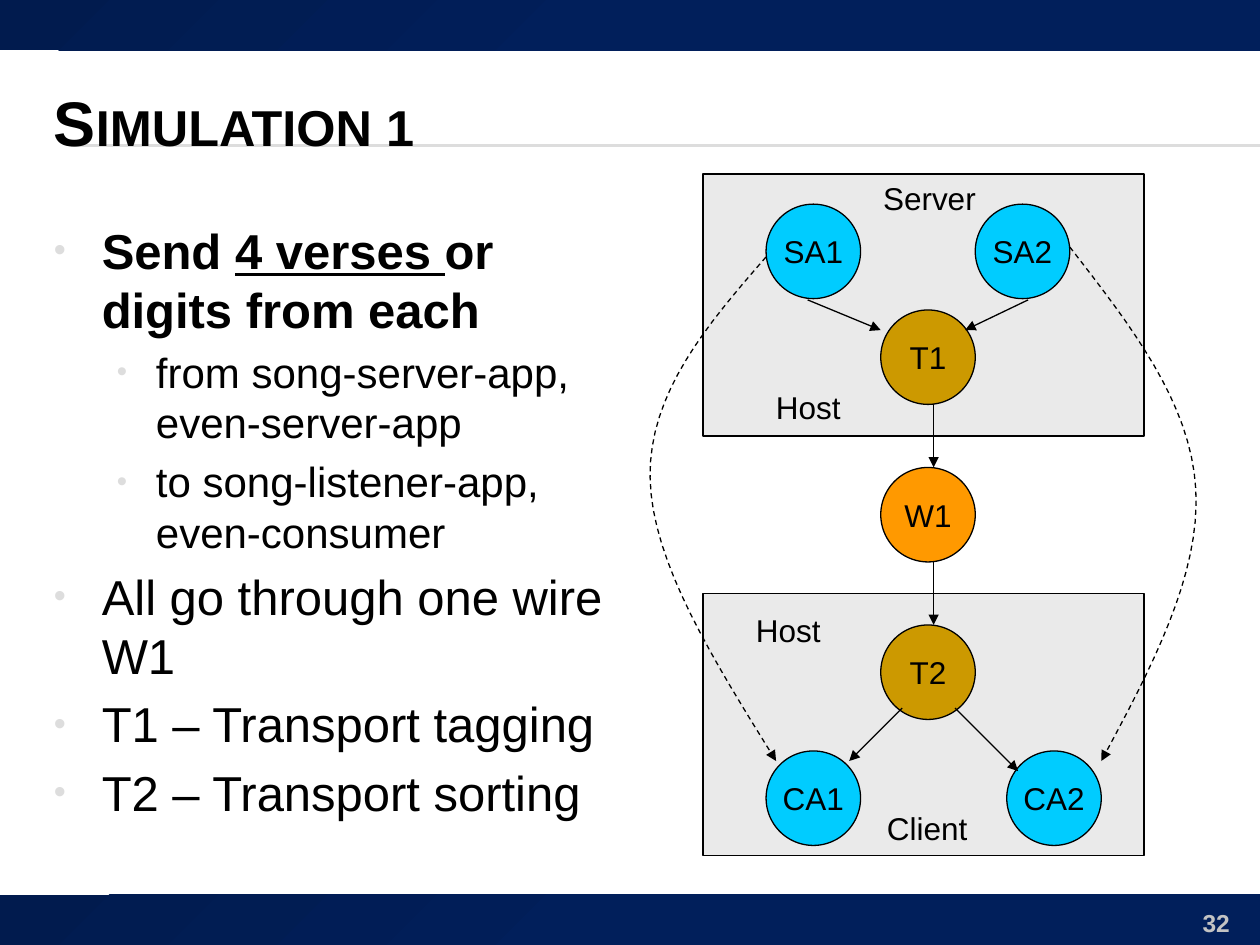
from lxml.etree import SubElement
from pptx import Presentation
from pptx.dml.color import RGBColor
from pptx.enum.dml import MSO_LINE
from pptx.enum.shapes import MSO_CONNECTOR, MSO_SHAPE
from pptx.enum.text import MSO_ANCHOR, PP_ALIGN
from pptx.oxml.ns import qn
from pptx.util import Inches, Pt

COLORS = {
    "black": "000000", "rule": "DDDDDD", "navy_dark": "011B4E", "navy": "011F5B",
    "number": "C3C3C3", "host": "EAEAEA", "app": "00CCFF", "transport": "CC9900",
    "wire": "FF9900",
}
RGB = {name: RGBColor.from_string(value) for name, value in COLORS.items()}

prs = Presentation()
prs.slide_width, prs.slide_height = Inches(10), Inches(7.5)
slide = prs.slides.add_slide(prs.slide_layouts[6])
shapes = slide.shapes


def style_text(paragraph, size, color="black", bold=False):
    for run in paragraph.runs:
        run.font.name, run.font.size, run.font.bold = "Arial", Pt(size), bold
        run.font.color.rgb = RGB[color]


def style_line(item, color="black", arrow=False):
    item.line.color.rgb = RGB[color]
    item.line.width = Pt(0.75)
    if arrow:
        SubElement(item.line._get_or_add_ln(), qn("a:tailEnd"), type="triangle")
    if item._element.spPr.find(qn("a:effectLst")) is None:
        SubElement(item._element.spPr, qn("a:effectLst"))


# Double rule under the title
for y in (1.15, 1.16):
    rule = shapes.add_connector(MSO_CONNECTOR.STRAIGHT, Inches(0.56), Inches(y), Inches(10), Inches(y))
    style_line(rule, "rule")

# Top and bottom bands
for y in (0, 7.1):
    band = shapes.add_shape(MSO_SHAPE.RECTANGLE, 0, Inches(y), Inches(10), Inches(0.4))
    band.shadow.inherit = False
    band.line.fill.background()
    band.fill.gradient()
    band.fill.gradient_angle = 315
    for stop, color, position in zip(band.fill.gradient_stops, ("navy_dark", "navy"), (0, 0.5)):
        stop.color.rgb, stop.position = RGB[color], position

# Title
title = shapes.add_textbox(Inches(0.33), Inches(0.5), Inches(9.5), Inches(0.92)).text_frame
title.word_wrap = True
title.vertical_anchor = MSO_ANCHOR.MIDDLE
title.text = "Simulation 1"
style_text(title.paragraphs[0], 36, bold=True)
title.paragraphs[0].runs[0].font._element.set("cap", "small")

# Bullet list: level, bold, runs
bullets = [
    (0, True, ["Send ", "4 verses ", "or digits from each"]),
    (1, False, ["from song-server-app, even-server-app"]),
    (1, False, ["to song-listener-app, even-consumer"]),
    (0, False, ["All go through one wire W1"]),
    (0, False, ["T1 – Transport tagging"]),
    (0, False, ["T2 – Transport sorting"]),
]
body = shapes.add_textbox(Inches(0.33), Inches(1.7), Inches(4.74), Inches(5.3)).text_frame
body.word_wrap = True
for i, (level, bold, texts) in enumerate(bullets):
    bullet = body.paragraphs[0] if i == 0 else body.add_paragraph()
    bullet.level = level
    for text in texts:
        bullet.add_run().text = text
    style_text(bullet, (28, 24)[level], bold=bold)
    margin, indent = ((0.38, -0.38), (0.81, -0.31))[level]
    pPr = bullet._p.get_or_add_pPr()
    pPr.set("marL", str(Inches(margin)))
    pPr.set("indent", str(Inches(indent)))
    SubElement(SubElement(pPr, qn("a:spcBef")), qn("a:spcPct"), val="20000")
    SubElement(SubElement(pPr, qn("a:buClr")), qn("a:srgbClr"), val=COLORS["rule"])
    SubElement(pPr, qn("a:buSzPct"), val="70000")
    SubElement(pPr, qn("a:buFont"), typeface="Arial")
    SubElement(pPr, qn("a:buChar"), char="•")
body.paragraphs[0].runs[1].font.underline = True

# Slide number
number = shapes.add_textbox(Inches(9.03), Inches(7.16), Inches(0.83), Inches(0.27)).text_frame
number.word_wrap = True
number.text = "32"
number.paragraphs[0].alignment = PP_ALIGN.RIGHT
style_text(number.paragraphs[0], 14, "number", True)

# Server and client hosts
for y in (1.38, 4.71):
    host = shapes.add_shape(MSO_SHAPE.RECTANGLE, Inches(5.58), Inches(y), Inches(3.5), Inches(2.08))
    host.shadow.inherit = False
    host.fill.solid()
    host.fill.fore_color.rgb = RGB["host"]
    style_line(host)

# Nodes
nodes = [
    ("SA1", 6.08, 1.62, "app"), ("SA2", 7.74, 1.62, "app"),
    ("T1", 6.99, 2.46, "transport"), ("T2", 6.99, 4.96, "transport"),
    ("CA1", 6.08, 5.96, "app"), ("CA2", 7.99, 5.96, "app"),
    ("W1", 6.99, 3.71, "wire"),
]
for name, x, y, color in nodes:
    node = shapes.add_shape(MSO_SHAPE.OVAL, Inches(x), Inches(y), Inches(0.75), Inches(0.75))
    node.shadow.inherit = False
    node.fill.solid()
    node.fill.fore_color.rgb = RGB[color]
    style_line(node)
    label = node.text_frame
    label.word_wrap = False
    label.vertical_anchor = MSO_ANCHOR.MIDDLE
    label.text = name
    label.paragraphs[0].alignment = PP_ALIGN.CENTER
    style_text(label.paragraphs[0], 18)

# Straight arrows between neighbours
arrows = [
    (6.41, 2.38, 6.99, 2.62), (8.16, 2.38, 7.66, 2.62),
    (7.41, 3.21, 7.41, 3.71), (7.41, 4.46, 7.41, 4.96),
    (7.16, 5.62, 6.74, 6.04), (7.58, 5.62, 8.08, 6.12),
]
for ends in arrows:
    arrow = shapes.add_connector(MSO_CONNECTOR.STRAIGHT, *[Inches(v) for v in ends])
    style_line(arrow, arrow=True)

# Dashed end-to-end flows, each two joined Bezier curves
flows = [
    [(6.08, 2.04), (5.61, 2.58), (5.15, 3.12), (5.16, 3.79), (5.17, 4.46), (5.67, 5.25), (6.16, 6.04)],
    [(8.49, 1.96), (8.97, 2.58), (9.45, 3.19), (9.49, 3.88), (9.53, 4.56), (9.14, 5.3), (8.74, 6.04)],
]
STEPS = 16
for controls in flows:
    points = []
    for start in (0, 3):
        for step in range(1, STEPS + 1):
            t = step / STEPS
            weights = ((1 - t) ** 3, 3 * t * (1 - t) ** 2, 3 * t * t * (1 - t), t ** 3)
            curve = controls[start:start + 4]
            points.append([Inches(sum(w * p[axis] for w, p in zip(weights, curve))) for axis in (0, 1)])
    builder = shapes.build_freeform(*[Inches(v) for v in controls[0]])
    builder.add_line_segments(points, close=False)
    flow = builder.convert_to_shape()
    flow.shadow.inherit = False
    flow.fill.background()
    flow.line.dash_style = MSO_LINE.DASH
    style_line(flow, arrow=True)

# Host labels
for text, x, y, width in [("Host", 5.9, 4.8, 0.72), ("Host", 6.06, 3.03, 0.72),
                          ("Server", 6.91, 1.37, 0.95), ("Client", 6.94, 6.37, 0.85)]:
    caption = shapes.add_textbox(Inches(x), Inches(y), Inches(width), Inches(0.4)).text_frame
    caption.word_wrap = False
    caption.text = text
    style_text(caption.paragraphs[0], 18)

prs.save("out.pptx")
